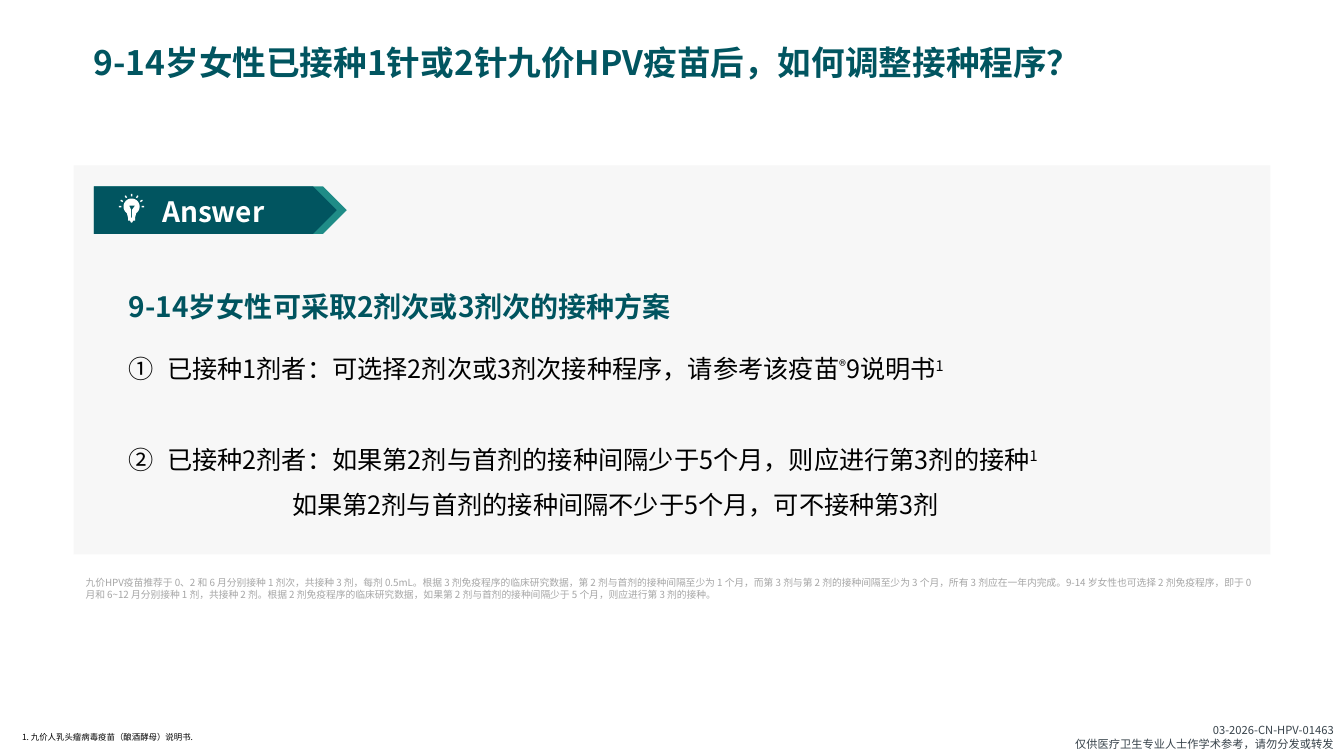
from math import cos, radians, sin

from pptx import Presentation
from pptx.dml.color import RGBColor
from pptx.enum.shapes import MSO_SHAPE as Shape
from pptx.enum.text import MSO_ANCHOR as Anchor, PP_ALIGN as Align
from pptx.oxml.ns import qn
from pptx.oxml.xmlchemy import OxmlElement
from pptx.util import Inches, Pt

# Content
TITLE = "9-14岁女性已接种1针或2针九价HPV疫苗后，如何调整接种程序？"
LABEL = "Answer"
HEADLINE = "9-14岁女性可采取2剂次或3剂次的接种方案"
# Each answer: number, line spacing, space before, left indent, (text, raised) runs
ANSWERS = [
    (1, 2, 0, 0.38, [("已接种1剂者：可选择2剂次或3剂次接种程序，请参考该疫苗", False),
                     ("®", True), ("9说明书", False), ("1", True)]),
    (2, 1.5, 32.5, 0.38, [("已接种2剂者：如果第2剂与首剂的接种间隔少于5个月，则应进行第3剂的接种", False),
                          ("1", True)]),
    (None, 1.5, 0, 1.62, [("如果第2剂与首剂的接种间隔不少于5个月，可不接种第3剂", False)]),
]
DOSING_NOTE = (
    "九价HPV疫苗推荐于 0、2 和 6 月分别接种 1 剂次，共接种 3 剂，每剂 0.5mL。"
    "根据 3 剂免疫程序的临床研究数据，第 2 剂与首剂的接种间隔至少为 1 个月，"
    "而第 3 剂与第 2 剂的接种间隔至少为 3 个月，所有 3 剂应在一年内完成。"
    "9-14 岁女性也可选择 2 剂免疫程序，即于 0 月和 6~12 月分别接种 1 剂，共接种 2 剂。"
    "根据 2 剂免疫程序的临床研究数据，如果第 2 剂与首剂的接种间隔少于 5 个月，"
    "则应进行第 3 剂的接种。"
)
REFERENCE = "1. 九价人乳头瘤病毒疫苗（酿酒酵母）说明书."
APPROVAL = ["03-2026-CN-HPV-01463", "仅供医疗卫生专业人士作学术参考，请勿分发或转发"]

FONT = "Noto Sans CJK SC"
TEAL = RGBColor(0x01, 0x55, 0x60)
HEADLINE_TEAL = RGBColor(0x00, 0x54, 0x5F)
LIGHT_TEAL = RGBColor(0x1F, 0x8C, 0x87)
PANEL_GREY = RGBColor(0xF7, 0xF7, 0xF7)
NOTE_GREY = RGBColor(0xA6, 0xA6, 0xA6)
SLATE = RGBColor(0x37, 0x42, 0x4A)
BLACK = RGBColor(0, 0, 0)
WHITE = RGBColor(0xFF, 0xFF, 0xFF)

# Bulb geometry
BULB_CENTRE = (1.305, 2.05)
BULB_RADIUS = 0.08
BULB_BASE = [(1.26, 2.12), (1.27, 2.16), (1.27, 2.19), (1.29, 2.19), (1.3, 2.21),
             (1.31, 2.21), (1.32, 2.19), (1.34, 2.19), (1.34, 2.16), (1.35, 2.12)]
FILAMENT = [(1.28, 2.04), (1.3, 2.08), (1.3, 2.16), (1.31, 2.16), (1.31, 2.08), (1.34, 2.04)]

prs = Presentation()
prs.slide_width, prs.slide_height = Inches(13.33), Inches(7.5)
slide = prs.slides.add_slide(prs.slide_layouts[6])


def text_frame(left, top, width, height):
    box = slide.shapes.add_textbox(*map(Inches, (left, top, width, height)))
    box.text_frame.word_wrap = True
    return box.text_frame


def style(paragraph, size, color, bold=False, spacing=None, align=None):
    font = paragraph.font
    font.size, font.bold, font.name = Pt(size), bold, FONT
    font.color.rgb = color
    east_asian = OxmlElement("a:ea")
    east_asian.set("typeface", FONT)
    paragraph._p.pPr.find(qn("a:defRPr")).append(east_asian)
    if spacing:
        paragraph.line_spacing = spacing
    if align:
        paragraph.alignment = align


def paint(shape, color):
    shape.shadow.inherit = False
    shape.fill.solid()
    shape.fill.fore_color.rgb = color
    shape.line.fill.background()


def block(kind, left, top, width, height, color):
    paint(slide.shapes.add_shape(kind, *map(Inches, (left, top, width, height))), color)


def around_bulb(radius, degrees, offset=0):
    """Point at an angle from the bulb centre, shifted sideways by offset."""
    a = radians(degrees)
    return (BULB_CENTRE[0] + radius * cos(a) - offset * sin(a),
            BULB_CENTRE[1] - radius * sin(a) - offset * cos(a))


# Title
title = text_frame(0.83, 0.29, 11.96, 0.71)
title.vertical_anchor = Anchor.MIDDLE
title.text = TITLE
style(title.paragraphs[0], 24, TEAL, True, 0.9)

# Answer panel and its arrow label
block(Shape.RECTANGLE, 0.73, 1.64, 11.87, 3.86, PANEL_GREY)
for ribbon_width, ribbon_color in [(2.51, LIGHT_TEAL), (2.41, TEAL)]:
    block(Shape.PENTAGON, 0.93, 1.85, ribbon_width, 0.47, ribbon_color)
label = text_frame(1.51, 1.81, 1.56, 0.5)
label.text = LABEL
style(label.paragraphs[0], 20, WHITE, True, 1.2, Align.JUSTIFY)
label.paragraphs[0].space_after = Pt(6)

# Light bulb with seven rays
glass = [around_bulb(BULB_RADIUS, angle) for angle in range(-55, 236, 10)]
rays = [[around_bulb(r, angle, side) for r, side in
         [(0.1, -0.007), (0.125, -0.007), (0.125, 0.007), (0.1, 0.007)]]
        for angle in range(0, 181, 30)]
bulb = None
for contour in [glass + BULB_BASE, FILAMENT] + rays:
    points = [(Inches(x), Inches(y)) for x, y in contour]
    if bulb is None:
        bulb = slide.shapes.build_freeform(*points[0])
    else:
        bulb.move_to(*points[0])
    bulb.add_line_segments(points[1:], close=True)
paint(bulb.convert_to_shape(), WHITE)

# Answers
answers = text_frame(1.18, 2.49, 11.13, 2.54)
answers.text = HEADLINE
style(answers.paragraphs[0], 20, HEADLINE_TEAL, True, 2)
for number, spacing, gap, indent, parts in ANSWERS:
    answer = answers.add_paragraph()
    props = answer._p.get_or_add_pPr()
    props.set("marL", str(Inches(indent)))
    if number:
        props.set("indent", str(-Inches(indent)))
        bullet = OxmlElement("a:buAutoNum")
        bullet.set("type", "circleNumDbPlain")
        bullet.set("startAt", str(number))
        props.append(bullet)
    style(answer, 18, BLACK, False, spacing)
    if gap:
        answer.space_before = Pt(gap)
    for words, raised in parts:
        run = answer.add_run()
        run.text = words
        if raised:
            run._r.get_or_add_rPr().set("baseline", "30000")

# Small print
for place, lines, size, color, align in [
    ((0.75, 5.67, 11.85, 0.34), [DOSING_NOTE], 7, NOTE_GREY, None),
    ((0.12, 7.21, 11.31, 0.2), [REFERENCE], 6, BLACK, None),
    ((8.57, 7.13, 4.76, 0.37), APPROVAL, 8, SLATE, Align.RIGHT),
]:
    small_print = text_frame(*place)
    small_print.text = "\n".join(lines)
    for line in small_print.paragraphs:
        style(line, size, color, align=align)

prs.save("out.pptx")
